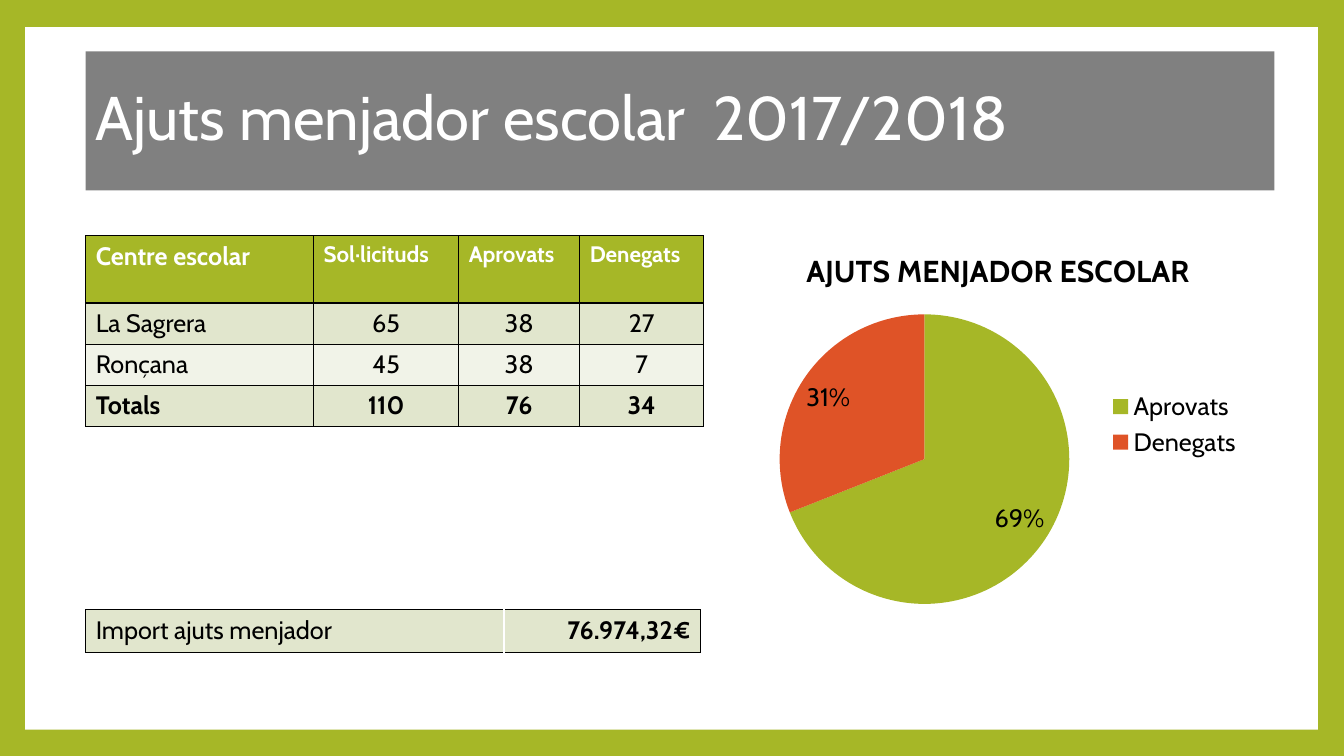
from lxml import etree
from pptx import Presentation
from pptx import util as u
from pptx.chart.data import CategoryChartData
from pptx.dml.color import RGBColor
from pptx.enum import chart as chart_enum, shapes, text
from pptx.oxml import parse_xml
from pptx.oxml.ns import nsdecls, qn

FONT = "Cabin"
GREEN, ORANGE, GREY = "A6B727", "DF5327", "808080"
BAND_DARK, BAND_LIGHT = "E1E6CD", "F1F3E8"
BLACK, WHITE = "000000", "FFFFFF"
LEFT, CENTER, RIGHT = text.PP_ALIGN.LEFT, text.PP_ALIGN.CENTER, text.PP_ALIGN.RIGHT

HEADINGS = ["Centre escolar", "Sol·licituds", "Aprovats", "Denegats"]
SCHOOLS = [("La Sagrera", 65, 38, 27), ("Ronçana", 45, 38, 7), ("Totals", 110, 76, 34)]
OUTCOMES = [("Aprovats", 69, GREEN), ("Denegats", 31, ORANGE)]


def paint(fill, value):
    fill.solid()
    fill.fore_color.rgb = RGBColor.from_string(value)


def style_font(font, size=18, ink=BLACK, bold=False):
    font.name, font.size, font.bold = FONT, u.Pt(size), bold
    font.color.rgb = RGBColor.from_string(ink)


def write(frame, words, align=LEFT, **style):
    paragraph = frame.paragraphs[0]
    paragraph.alignment = align
    run = paragraph.add_run()
    run.text = words
    style_font(run.font, **style)
    return paragraph


def add_box(slide, box, fill):
    shape = slide.shapes.add_shape(shapes.MSO_SHAPE.RECTANGLE, *map(u.Inches, box))
    shape.shadow.inherit = False
    paint(shape.fill, fill)
    shape.line.fill.background()
    return shape


def add_title(slide, box, words):
    frame = add_box(slide, box, GREY).text_frame
    frame.word_wrap = True
    frame.vertical_anchor = text.MSO_ANCHOR.MIDDLE
    write(frame, words, size=44, ink=WHITE).line_spacing = 0.9


def set_borders(cell, left, right):
    properties = cell._tc.get_or_add_tcPr()
    edges = {"lnL": left, "lnR": right, "lnT": BLACK, "lnB": BLACK}
    for index, (tag, value) in enumerate(edges.items()):
        line = etree.Element(qn(f"a:{tag}"), w=str(u.Pt(1)))
        fill = etree.SubElement(line, qn("a:solidFill"))
        etree.SubElement(fill, qn("a:srgbClr"), val=value)
        properties.insert(index, line)


def fill_cell(cell, words, fill, left=BLACK, right=BLACK, **style):
    """Set a cell's text, background and the colours of its side borders."""
    paint(cell.fill, fill)
    write(cell.text_frame, words, **style)
    set_borders(cell, left, right)


def add_table(slide, box, width_shares, height_shares):
    """Divide the box into columns and rows in proportion to the shares."""
    left, top, width, height = box
    table = slide.shapes.add_table(
        len(height_shares), len(width_shares), *map(u.Inches, box)).table
    for column, share in zip(table.columns, width_shares):
        column.width = u.Inches(width * share / sum(width_shares))
    for row, share in zip(table.rows, height_shares):
        row.height = u.Inches(height * share / sum(height_shares))
    return table


def add_schools_table(slide, box):
    table = add_table(slide, box, [2.26, 1.44, 1.2, 1.23], [0.67] + [0.41] * len(SCHOOLS))
    for column, heading in enumerate(HEADINGS):
        fill_cell(table.cell(0, column), heading, GREEN,
                  size=16 if column else 18, ink=WHITE, bold=True)
    for row, school in enumerate(SCHOOLS, 1):
        band = BAND_DARK if row % 2 else BAND_LIGHT
        is_total = row == len(SCHOOLS)
        for column, value in enumerate(school):
            fill_cell(table.cell(row, column), str(value), band,
                      align=CENTER if column else LEFT, bold=is_total)


def add_amount_table(slide, box):
    table = add_table(slide, box, [4.15, 1.95], [1])
    fill_cell(table.cell(0, 0), "Import ajuts menjador", BAND_DARK, right=WHITE)
    fill_cell(table.cell(0, 1), "76.974,32€", BAND_DARK, left=WHITE, align=RIGHT, bold=True)


def place_plot(chart, **fractions):
    """Fix the plot area at fractions of the chart's size."""
    area = chart._chartSpace.chart.plotArea
    for layout in area.findall(qn("c:layout")):
        area.remove(layout)
    values = "".join(f'<c:{key} val="{value}"/>' for key, value in fractions.items())
    area.insert(0, parse_xml(
        f'<c:layout {nsdecls("c")}><c:manualLayout><c:layoutTarget val="inner"/>'
        f'<c:xMode val="edge"/><c:yMode val="edge"/>{values}</c:manualLayout></c:layout>'))


def label_percentages(plot):
    plot.has_data_labels = True
    labels = plot.data_labels
    labels.show_percentage, labels.show_value = True, False
    labels.number_format, labels.number_format_is_linked = "0%", False
    labels.position = chart_enum.XL_LABEL_POSITION.BEST_FIT
    style_font(labels.font)


def add_grants_pie(slide, box):
    names, percentages, fills = zip(*OUTCOMES)
    data = CategoryChartData()
    data.categories = names
    data.add_series("Series 1", percentages)
    chart = slide.shapes.add_chart(
        chart_enum.XL_CHART_TYPE.PIE, *map(u.Inches, box), data).chart
    style_font(chart.font)
    chart.has_title = True
    write(chart.chart_title.text_frame, "AJUTS MENJADOR ESCOLAR",
          align=CENTER, size=21.6, bold=True)
    chart.has_legend = True
    chart.legend.position = chart_enum.XL_LEGEND_POSITION.RIGHT
    chart.legend.include_in_layout = False
    style_font(chart.legend.font)
    plot = chart.plots[0]
    plot.vary_by_categories = True
    for index, fill in enumerate(fills):
        paint(plot.series[0].points[index].format.fill, fill)
    label_percentages(plot)
    place_plot(chart, x=0.07, y=0.21, w=0.57, h=0.76)


def main():
    presentation = Presentation()
    presentation.slide_width, presentation.slide_height = u.Inches(13.33), u.Inches(7.5)
    slide = presentation.slides.add_slide(presentation.slide_layouts[6])
    paint(slide.background.fill, GREEN)
    add_box(slide, (0.25, 0.27, 12.82, 6.97), WHITE)
    margin = 0.85
    add_title(slide, (margin, 0.51, 11.79, 1.38), "Ajuts menjador escolar  2017/2018")
    add_schools_table(slide, (margin, 2.34, 6.13, 1.89))
    add_grants_pie(slide, (7.38, 2.29, 5.04, 3.84))
    add_amount_table(slide, (margin, 6.05, 6.1, 0.42))
    presentation.save("out.pptx")


if __name__ == "__main__":
    main()
